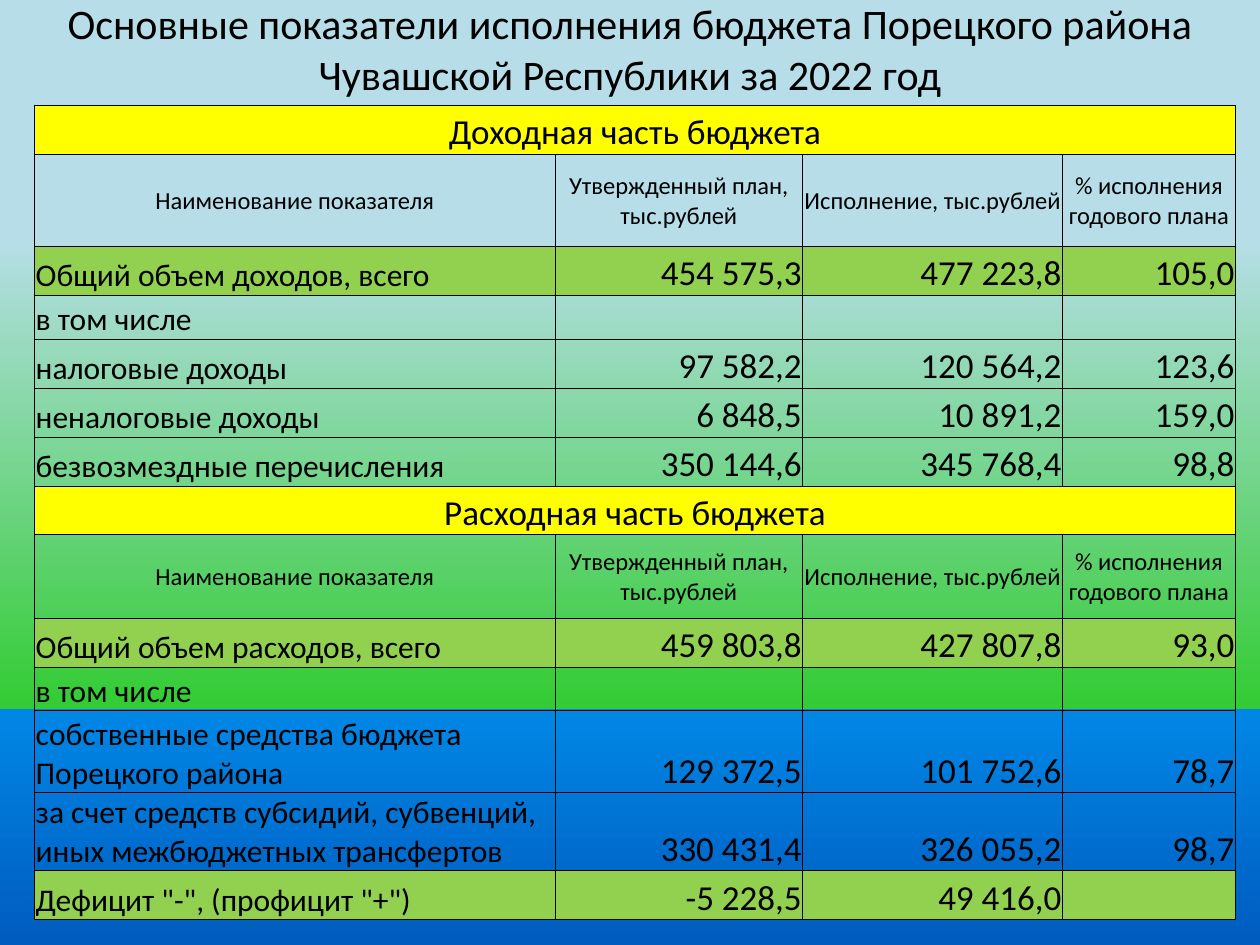
"""Build a one-slide table of the district budget execution for 2022."""
from copy import deepcopy

from lxml import etree
from pptx import Presentation
from pptx.dml.color import RGBColor
from pptx.enum import text
from pptx.oxml import ns
from pptx.util import Pt

BLACK = RGBColor(0x00, 0x00, 0x00)
YELLOW = RGBColor(0xFF, 0xFF, 0x00)
GREEN = RGBColor(0x92, 0xD0, 0x50)
BACKDROP = [
    (0.25, RGBColor(0xB7, 0xDE, 0xE8)),
    (0.75, RGBColor(0x33, 0xCC, 0x33)),
    (0.75, RGBColor(0x00, 0x87, 0xE6)),
    (1, RGBColor(0x00, 0x5C, 0xBF)),
]
ALIGN, ANCHOR = text.PP_ALIGN, text.MSO_ANCHOR

HEADINGS = ["Наименование показателя", "Утвержденный план, тыс.рублей",
            "Исполнение, тыс.рублей", "% исполнения годового плана"]
INCLUDING = ["в том числе", "", "", ""]
ROWS = [
    ("section", 28, ["Доходная часть бюджета", "", "", ""]),
    ("header", 52.5, HEADINGS),
    ("total", 28, ["Общий объем доходов, всего", "454 575,3", "477 223,8", "105,0"]),
    ("item", 25, INCLUDING),
    ("item", 28, ["налоговые доходы", "97 582,2", "120 564,2", "123,6"]),
    ("item", 28, ["неналоговые доходы", "6 848,5", "10 891,2", "159,0"]),
    ("item", 28, ["безвозмездные перечисления", "350 144,6", "345 768,4", "98,8"]),
    ("section", 28, ["Расходная часть бюджета", "", "", ""]),
    ("header", 47.5, HEADINGS),
    ("total", 28, ["Общий объем расходов, всего", "459 803,8", "427 807,8", "93,0"]),
    ("item", 25, INCLUDING),
    ("item", 47, ["собственные средства бюджета Порецкого района",
                  "129 372,5", "101 752,6", "78,7"]),
    ("item", 44.5, ["за счет средств субсидий, субвенций, иных межбюджетных трансфертов",
                    "330 431,4", "326 055,2", "98,7"]),
    ("total", 28, ['Дефицит "-", (профицит "+")', "-5 228,5", "49 416,0", ""]),
]
COLUMNS = [297.3, 141.7, 148.4, 98.8]
FILLS = {"section": YELLOW, "total": GREEN}


def write(frame, wording, size, align):
    frame.text = wording
    para = frame.paragraphs[0]
    para.alignment = align
    for span in para.runs:
        span.font.name = "Calibri"
        span.font.size = Pt(size)
        span.font.color.rgb = BLACK


def add_borders(cell):
    properties = cell._tc.get_or_add_tcPr()
    for side in ("L", "R", "T", "B"):
        line = etree.SubElement(properties, ns.qn(f"a:ln{side}"), w=str(Pt(0.5)))
        solid = etree.SubElement(line, ns.qn("a:solidFill"))
        etree.SubElement(solid, ns.qn("a:srgbClr"), val=str(BLACK))


deck = Presentation()
deck.slide_width, deck.slide_height = Pt(720), Pt(540)
page = deck.slides.add_slide(deck.slide_layouts[6])

backdrop = page.background.fill
backdrop.gradient()
backdrop.gradient_angle = 270
stop_list = next(page._element.iter(ns.qn("a:gsLst")))
for stop in list(stop_list):
    stop_list.append(deepcopy(stop))
for stop, (position, color) in zip(backdrop.gradient_stops, BACKDROP):
    stop.position = position
    stop.color.rgb = color

title = page.shapes.add_textbox(Pt(0), Pt(0), Pt(720), Pt(55)).text_frame
title.word_wrap = True
title.vertical_anchor = ANCHOR.MIDDLE
write(title, "Основные показатели исполнения бюджета Порецкого района "
             "Чувашской Республики за 2022 год", 24, ALIGN.CENTER)

height = sum(row[1] for row in ROWS)
table = page.shapes.add_table(len(ROWS), len(COLUMNS), Pt(19.8), Pt(60.3),
                              Pt(sum(COLUMNS)), Pt(height)).table
table.first_row = table.horz_banding = False
for column, width in zip(table.columns, COLUMNS):
    column.width = Pt(width)

for r, (kind, row_height, wordings) in enumerate(ROWS):
    table.rows[r].height = Pt(row_height)
    for c, wording in enumerate(wordings):
        cell = table.cell(r, c)
        cell.margin_left = cell.margin_right = cell.margin_top = Pt(0.6)
        cell.margin_bottom = Pt(0)
        cell.vertical_anchor = ANCHOR.MIDDLE if kind == "header" else ANCHOR.BOTTOM
        if kind in ("section", "header"):
            size, align = (20 if kind == "section" else 14), ALIGN.CENTER
        else:
            size, align = (20, ALIGN.RIGHT) if c else (18, ALIGN.LEFT)
        write(cell.text_frame, wording, size, align)
        add_borders(cell)
        if kind in FILLS:
            cell.fill.solid()
            cell.fill.fore_color.rgb = FILLS[kind]
        else:
            cell.fill.background()
    if kind == "section":
        table.cell(r, 0).merge(table.cell(r, len(COLUMNS) - 1))

deck.save("out.pptx")
